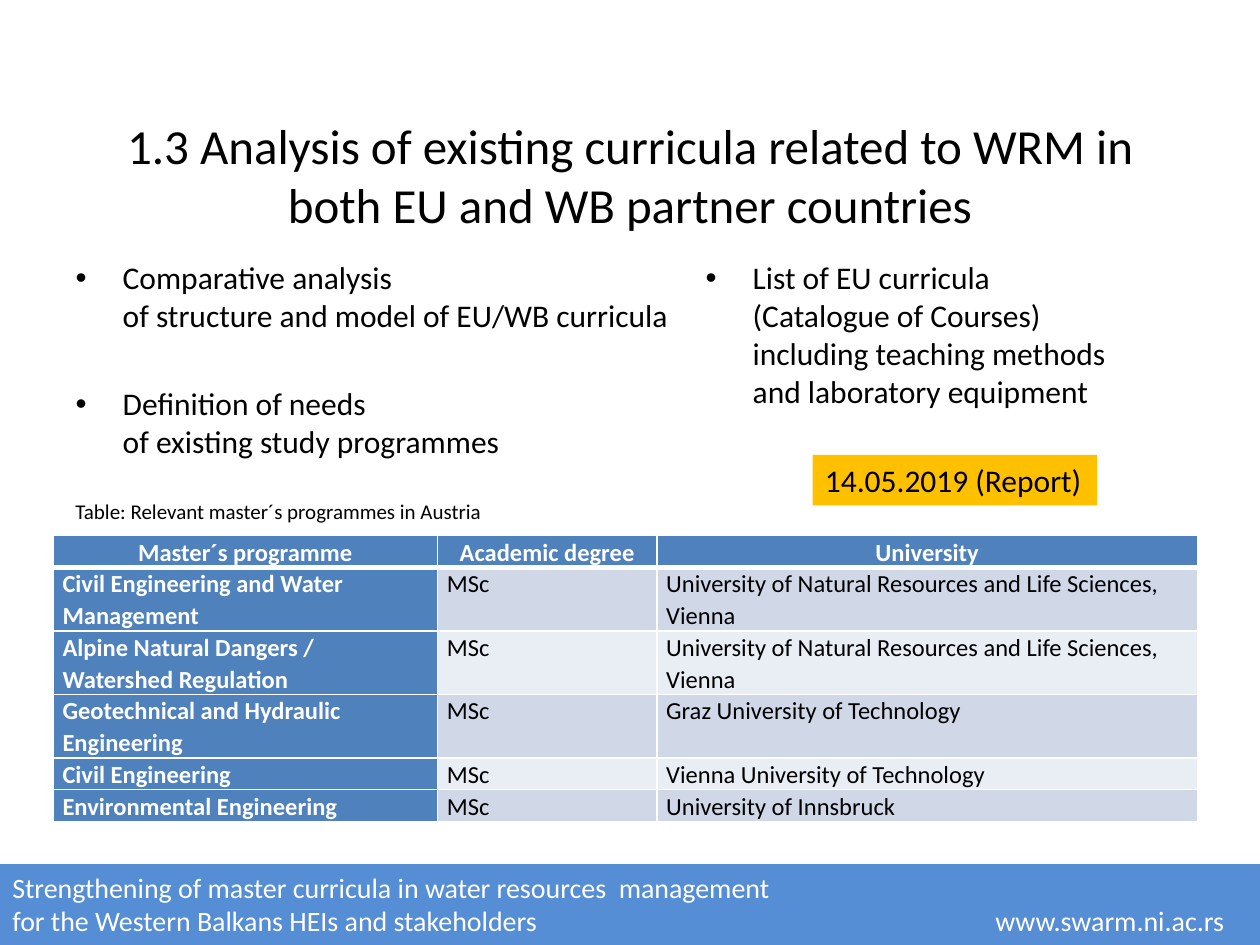
"""Build the slide on existing water resources management curricula."""
from dataclasses import dataclass

from lxml.etree import SubElement
from pptx import Presentation
from pptx.dml.color import RGBColor
from pptx.enum.shapes import MSO_SHAPE
from pptx.enum.text import MSO_ANCHOR, MSO_AUTO_SIZE, PP_ALIGN
from pptx.oxml.ns import qn
from pptx.util import Cm, Pt


@dataclass(frozen=True)
class Theme:
    font: str = "Calibri"
    black: str = "000000"
    white: str = "FFFFFF"
    footer: str = "558ED5"
    header: str = "4F81BD"
    bands: tuple = ("D0D8E8", "E9EDF4")
    badge: str = "FFC000"
    title_pt: int = 28
    body_pt: int = 18
    footer_pt: int = 16
    table_pt: int = 14
    caption_pt: int = 12


theme = Theme()


def style(p, size, color=theme.black, align=PP_ALIGN.LEFT, bold=False):
    p.alignment = align
    p.font.name = theme.font
    p.font.size = Pt(size)
    p.font.bold = bold
    p.font.color.rgb = RGBColor.from_string(color)


def border(cell, side, width):
    ln = SubElement(cell._tc.get_or_add_tcPr(), qn(f"a:ln{side}"), w=str(Pt(width)))
    fill = SubElement(ln, qn("a:solidFill"))
    SubElement(fill, qn("a:srgbClr"), val=theme.white)


prs = Presentation()
prs.slide_width, prs.slide_height = Cm(25.4), Cm(19.05)
s = prs.slides.add_slide(prs.slide_layouts.get_by_name("Two Content"))

title = s.shapes.title
title.left, title.top, title.width, title.height = Cm(1.27), Cm(2.34), Cm(22.86), Cm(2.34)
tf = title.text_frame
tf.text = "1.3 Analysis of existing curricula related to WRM in both EU and WB partner countries"
tf.auto_size = MSO_AUTO_SIZE.NONE
tf.vertical_anchor = MSO_ANCHOR.MIDDLE
style(tf.paragraphs[0], theme.title_pt, align=PP_ALIGN.CENTER)

lists = [
    (1, 1.27, 13.13, ["Comparative analysis \nof structure and model of EU/WB curricula",
                      "Definition of needs \nof existing study programmes"]),
    (2, 13.97, 10.36, ["List of EU curricula \n(Catalogue of Courses)\n"
                       "including teaching methods \nand laboratory equipment"]),
]
for idx, left, width, items in lists:
    body = s.placeholders[idx]
    body.left, body.top, body.width, body.height = Cm(left), Cm(5.08), Cm(width), Cm(5.51)
    tf = body.text_frame
    tf.auto_size = MSO_AUTO_SIZE.NONE
    for i, item in enumerate(items):
        p = tf.add_paragraph() if i else tf.paragraphs[0]
        p.text = item
        p.space_before = Pt(28.8 if i else 0)
        pPr = p._p.get_or_add_pPr()
        pPr.set("marL", str(Cm(0.95)))
        pPr.set("indent", str(-Cm(0.95)))
        style(p, theme.body_pt)

rects = [
    (0, 17.42, 25.4, 1.63, theme.footer, MSO_SHAPE.FLOWCHART_PROCESS, ""),
    (16.38, 9.17, 5.74, 1.02, theme.badge, MSO_SHAPE.RECTANGLE, "14.05.2019 (Report)"),
]
for left, top, width, height, color, kind, text in rects:
    sp = s.shapes.add_shape(kind, Cm(left), Cm(top), Cm(width), Cm(height))
    sp.shadow.inherit = False
    sp.fill.solid()
    sp.fill.fore_color.rgb = RGBColor.from_string(color)
    sp.line.fill.background()
    if text:
        sp.text_frame.text = text
        sp.text_frame.word_wrap = False
        style(sp.text_frame.paragraphs[0], theme.body_pt)

labels = [
    (0, 17.42, 16.92, 1.63, theme.footer_pt, theme.white, PP_ALIGN.LEFT,
     "Strengthening of master curricula in water resources  management\n"
     "for the Western Balkans HEIs and stakeholders"),
    (19.69, 18.09, 5.24, 0.94, theme.footer_pt, theme.white, PP_ALIGN.RIGHT,
     "www.swarm.ni.ac.rs"),
    (1.27, 9.93, 8.79, 0.77, theme.caption_pt, theme.black, PP_ALIGN.LEFT,
     "Table: Relevant master´s programmes in Austria"),
]
for left, top, width, height, size, color, align, text in labels:
    tf = s.shapes.add_textbox(Cm(left), Cm(top), Cm(width), Cm(height)).text_frame
    tf.word_wrap = True
    tf.text = text
    for p in tf.paragraphs:
        style(p, size, color, align)

rows = [
    ("Master´s programme", "Academic degree", "University"),
    ("Civil Engineering and Water Management", "MSc",
     "University of Natural Resources and Life Sciences, Vienna"),
    ("Alpine Natural Dangers / Watershed Regulation", "MSc",
     "University of Natural Resources and Life Sciences, Vienna"),
    ("Geotechnical and Hydraulic Engineering", "MSc", "Graz University of Technology"),
    ("Civil Engineering", "MSc", "Vienna University of Technology"),
    ("Environmental Engineering", "MSc", "University of Innsbruck"),
]
col_widths = [7.75, 4.42, 10.9]
row_heights = [0.64, 1.28, 1.28, 1.28, 0.64, 0.64]
table = s.shapes.add_table(len(rows), len(col_widths), Cm(1.07), Cm(10.8),
                           Cm(sum(col_widths)), Cm(sum(row_heights))).table
table.first_col = True
for col, width in zip(table.columns, col_widths):
    col.width = Cm(width)
for r, (row, height) in enumerate(zip(rows, row_heights)):
    table.rows[r].height = Cm(height)
    for c, text in enumerate(row):
        cell = table.cell(r, c)
        heading = r == 0 or c == 0
        cell.text = text
        cell.margin_left = cell.margin_right = Cm(0.19)
        cell.margin_top = cell.margin_bottom = Cm(0)
        for side in "LRTB":
            border(cell, side, 3 if (r, side) in ((0, "B"), (1, "T")) else 1)
        cell.fill.solid()
        cell.fill.fore_color.rgb = RGBColor.from_string(
            theme.header if heading else theme.bands[(r - 1) % 2])
        p = cell.text_frame.paragraphs[0]
        p.line_spacing = 1.07
        style(p, theme.table_pt, theme.white if heading else theme.black,
              PP_ALIGN.LEFT if r else PP_ALIGN.CENTER, heading)

prs.save("out.pptx")
